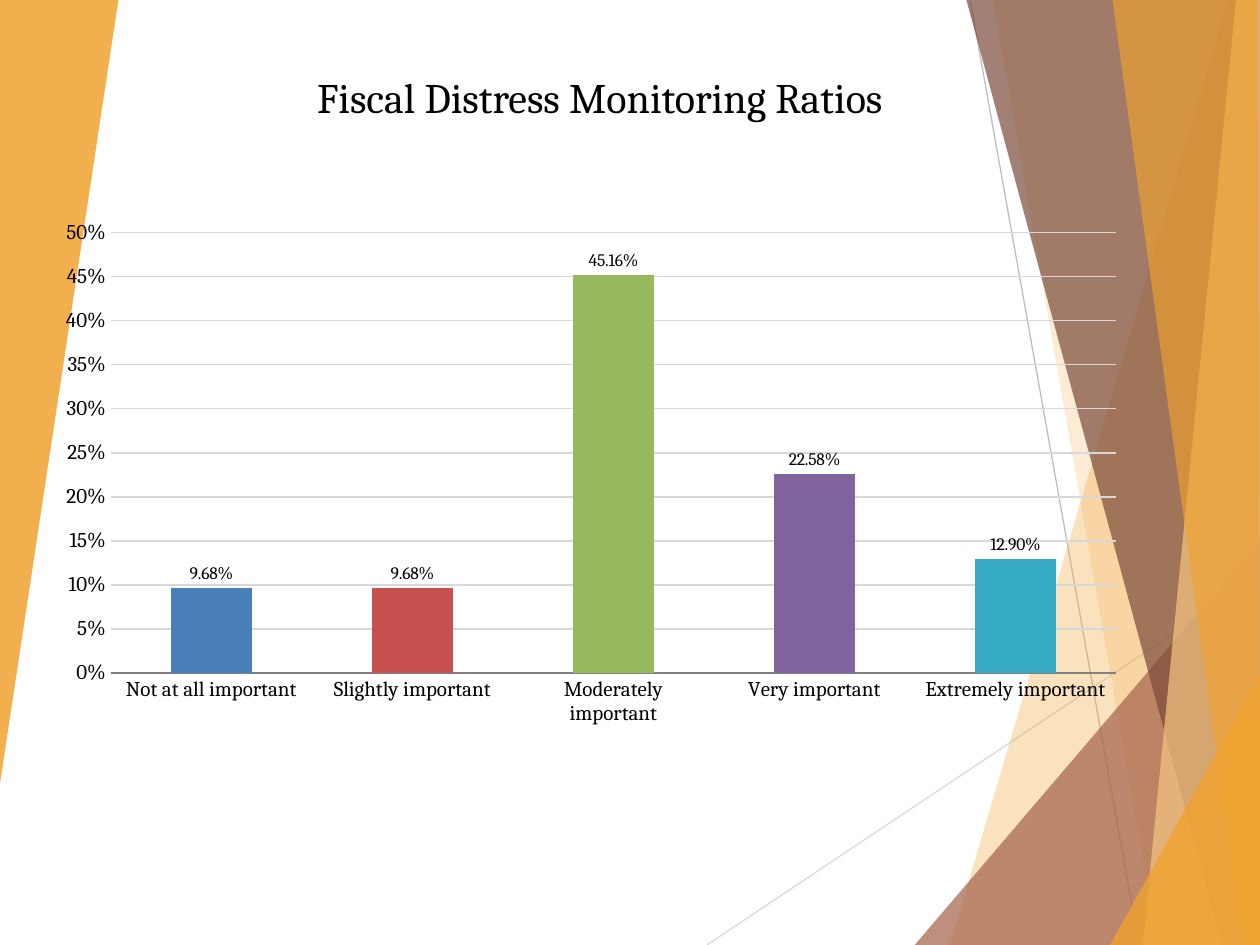
import pptx
import pptx.chart.data
import pptx.dml.color
import pptx.enum.chart
import pptx.enum.shapes
import pptx.enum.text
import pptx.oxml
import pptx.oxml.ns
import pptx.util
from lxml import etree

RGB = pptx.dml.color.RGBColor
Inches, Pt = pptx.util.Inches, pptx.util.Pt
qn = pptx.oxml.ns.qn

W, H = 10, 7.5
FONT = "Cambria"
BLACK = RGB(0x00, 0x00, 0x00)
AMBER = RGB(0xF0, 0xA2, 0x2E)
SAND = RGB(0xF6, 0xC7, 0x82)
CLAY = RGB(0xA5, 0x64, 0x4E)
BROWN = RGB(0x7C, 0x4B, 0x3B)
LIGHT_GRAY = RGB(0xD9, 0xD9, 0xD9)
MID_GRAY = RGB(0xBF, 0xBF, 0xBF)
GRID_GRAY = RGB(0xD8, 0xD8, 0xD8)
AXIS_GRAY = RGB(0x80, 0x80, 0x80)

TITLE = "Fiscal Distress Monitoring Ratios"
RATINGS = [  # category, share of answers, bar colour
    ("Not at all important", 0.0968, RGB(0x49, 0x80, 0xBA)),
    ("Slightly important", 0.0968, RGB(0xC6, 0x51, 0x4E)),
    ("Moderately important", 0.4516, RGB(0x96, 0xB9, 0x5D)),
    ("Very important", 0.2258, RGB(0x81, 0x64, 0x9F)),
    ("Extremely important", 0.129, RGB(0x38, 0xAB, 0xC4)),
]
RAYS = [  # start, end, colour
    ((5.61, H), (W, 4.57), LIGHT_GRAY),
    ((7.7, 0), (9.04, H), MID_GRAY),
]
FACETS = [  # corners, colour, opacity in percent
    ([(9.75, 0), (7.54, H), (W, H), (W, 0)], AMBER, 30),
    ([(7.88, 0), (9.19, H), (W, H), (W, 0)], AMBER, 20),
    ([(7.26, H), (W, 4.29), (W, H)], CLAY, 72),
    ([(7.67, 0), (9.7, H), (W, H), (W, 0)], BROWN, 70),
    ([(9.81, 0), (9.07, H), (W, H), (W, 0)], SAND, 70),
    ([(8.83, 0), (9.86, H), (W, H), (9.98, 0)], AMBER, 65),
    ([(8.81, H), (W, 5.35), (W, H)], AMBER, 80),
    ([(0, 0), (0.94, 0), (0, 6.22)], AMBER, 85),
]


def style_font(font, size, color=BLACK):
    font.name, font.size, font.bold = FONT, Pt(size), False
    font.color.rgb = color


def write_text(sp, text, size, align, anchor):
    tf = sp.text_frame
    tf.word_wrap = True
    tf.vertical_anchor = anchor
    p = tf.paragraphs[0]
    p.alignment = align
    r = p.add_run()
    r.text = text
    style_font(r.font, size)


def add_ray(slide, start, end, color):
    line = slide.shapes.add_connector(
        pptx.enum.shapes.MSO_CONNECTOR.STRAIGHT,
        *(Inches(v) for v in start + end))
    line.line.color.rgb = color
    line.line.width = Pt(0.75)
    etree.SubElement(line._element.spPr, qn("a:effectLst"))


def add_facet(slide, corners, color, opacity):
    points = [(Inches(x), Inches(y)) for x, y in corners]
    builder = slide.shapes.build_freeform(*points[0])
    builder.add_line_segments(points[1:], close=True)
    sp = builder.convert_to_shape()
    sp.shadow.inherit = False
    sp.line.fill.background()
    sp.fill.solid()
    sp.fill.fore_color.rgb = color
    clr = sp._element.spPr.find(qn("a:solidFill")).find(qn("a:srgbClr"))
    etree.SubElement(clr, qn("a:alpha"), val=str(opacity * 1000))


def add_ratings_chart(slide, left, top, width, height):
    xl = pptx.enum.chart
    data = pptx.chart.data.CategoryChartData(number_format="0.00%")
    data.categories = [name for name, _, _ in RATINGS]
    data.add_series("Series 1", [share for _, share, _ in RATINGS])
    chart = slide.shapes.add_chart(
        xl.XL_CHART_TYPE.COLUMN_CLUSTERED,
        *(Inches(v) for v in (left, top, width, height)), data).chart
    chart.has_legend = chart.has_title = False
    style_font(chart.font, 18)

    plot = chart.plots[0]
    plot.gap_width = 150
    plot.vary_by_categories = False
    for i, (_, _, color) in enumerate(RATINGS):
        fill = plot.series[0].points[i].format.fill
        fill.solid()
        fill.fore_color.rgb = color

    plot.has_data_labels = True
    labels = plot.data_labels
    labels.show_value = True
    labels.number_format, labels.number_format_is_linked = "0.00%", False
    labels.position = xl.XL_LABEL_POSITION.OUTSIDE_END
    style_font(labels.font, 10)

    for axis in (chart.category_axis, chart.value_axis):
        axis.major_tick_mark = axis.minor_tick_mark = xl.XL_TICK_MARK.NONE
        style_font(axis.tick_labels.font, 12)
    line = chart.category_axis.format.line
    line.color.rgb, line.width = AXIS_GRAY, Pt(0.75)

    value = chart.value_axis
    value.minimum_scale, value.maximum_scale, value.major_unit = 0, 0.5, 0.05
    value.tick_labels.number_format = "0%"
    value.tick_labels.number_format_is_linked = False
    value.format.line.fill.background()
    grid = value.major_gridlines.format.line
    grid.color.rgb, grid.width = GRID_GRAY, Pt(0.75)


def main():
    prs = pptx.Presentation()
    prs.slide_width, prs.slide_height = Inches(W), Inches(H)
    slide = prs.slides.add_slide(prs.slide_layouts[5])
    for ray in RAYS:
        add_ray(slide, *ray)
    for facet in FACETS:
        add_facet(slide, *facet)

    title = slide.shapes.title
    title.left, title.top = Inches(0.42), Inches(0.07)
    title.width, title.height = Inches(8.68), Inches(1.39)
    write_text(title, TITLE, size=24,
               align=pptx.enum.text.PP_ALIGN.CENTER,
               anchor=pptx.enum.text.MSO_ANCHOR.MIDDLE)
    slide.shapes._spTree.append(title._element)  # in front of the facets

    add_ratings_chart(slide, 0.35, 1.67, 8.68, 4.17)
    prs.save("out.pptx")


if __name__ == "__main__":
    main()
